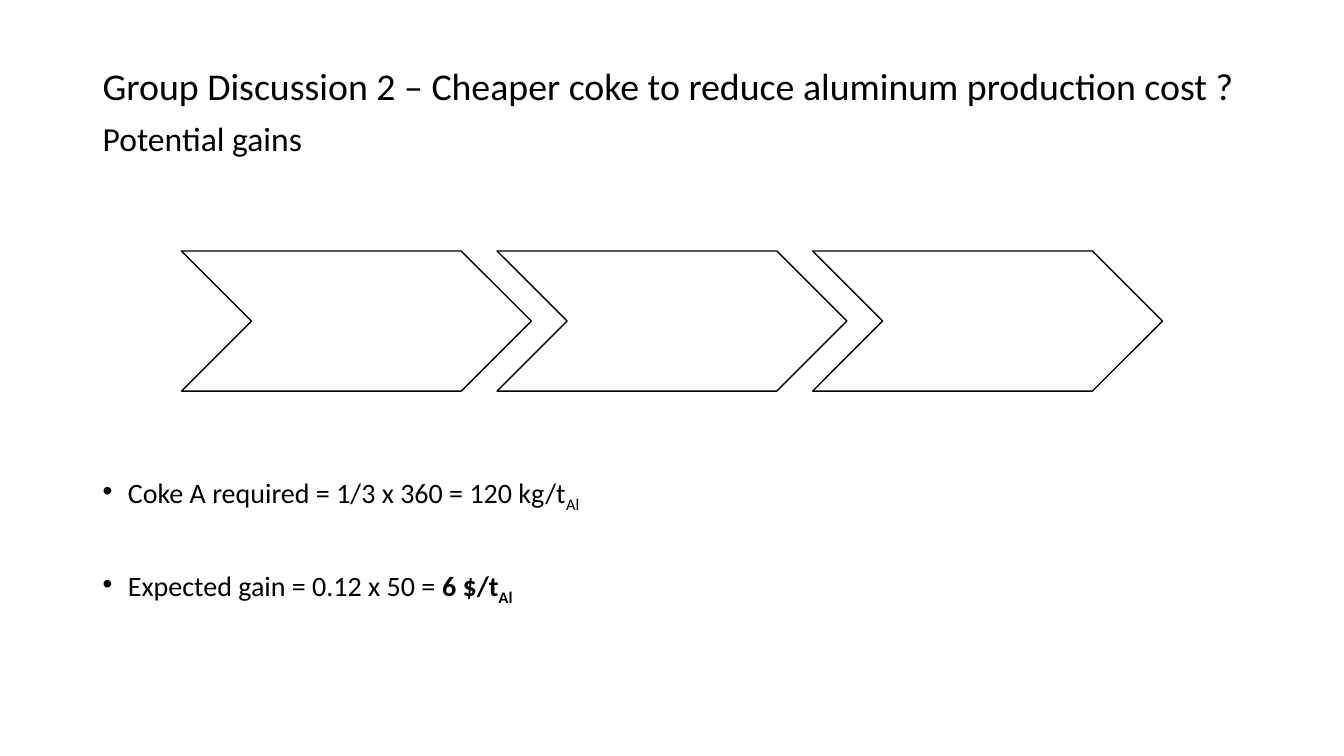
from lxml import etree
from pptx import Presentation
from pptx.dml.color import RGBColor
from pptx.enum.shapes import MSO_SHAPE
from pptx.enum.text import MSO_ANCHOR
from pptx.oxml.ns import qn
from pptx.util import Inches, Pt

CHEVRON = MSO_SHAPE.CHEVRON
MIDDLE, TOP = MSO_ANCHOR.MIDDLE, MSO_ANCHOR.TOP
BLACK = RGBColor(0, 0, 0)
WHITE = RGBColor(255, 255, 255)
FONT = "Calibri"


def add_frame(slide, box, anchor):
    frame = slide.shapes.add_textbox(*map(Inches, box)).text_frame
    frame.word_wrap = True
    frame.vertical_anchor = anchor
    return frame


def add_line(frame, index, before):
    line = frame.add_paragraph() if index else frame.paragraphs[0]
    line.line_spacing = 0.9
    line.space_before = Pt(before)
    return line


def add_words(line, words, size, bold=False, baseline=0):
    run = line.add_run()
    run.text = words
    style = {"name": FONT, "size": Pt(size), "bold": bold}
    for key, value in style.items():
        setattr(run.font, key, value)
    run.font.color.rgb = BLACK
    if baseline:
        run.font._element.set("baseline", str(baseline * 1000))


def add_heading(slide, box):
    frame = add_frame(slide, box, MIDDLE)
    lines = [
        ("Group Discussion 2 – Cheaper coke to reduce aluminum production cost ?", 27, 0),
        ("Potential gains", 24, 10),
    ]
    for index, (words, size, before) in enumerate(lines):
        add_words(add_line(frame, index, before), words, size)


def add_process(slide, box, count=3, overlap=0.34):
    left, top, width, height = box
    step_width = (width + (count - 1) * overlap) / count
    for index in range(count):
        x = left + index * (step_width - overlap)
        step = slide.shapes.add_shape(
            CHEVRON, *map(Inches, (x, top, step_width, height)))
        step.shadow.inherit = False
        step.fill.solid()
        step.fill.fore_color.rgb = WHITE
        step.line.color.rgb = BLACK
        step.line.width = Pt(1)


def add_calculations(slide, box):
    frame = add_frame(slide, box, TOP)
    calculations = [
        [("Coke A required = 1/3 x 360 = 120 kg/t", False, 0), ("Al", False, -25)],
        [("Expected gain = 0.12 x 50 = ", False, 0), ("6 $/t", True, 0), ("Al", True, -25)],
    ]
    for index, parts in enumerate(calculations):
        line = add_line(frame, index, 42 * index)
        properties = line._p.get_or_add_pPr()
        properties.set("marL", str(Inches(0.25)))
        properties.set("indent", str(Inches(-0.25)))
        etree.SubElement(properties, qn("a:buFont")).set("typeface", "Arial")
        etree.SubElement(properties, qn("a:buChar")).set("char", "•")
        for words, bold, baseline in parts:
            add_words(line, words, 20, bold, baseline)


def main():
    deck = Presentation()
    deck.slide_width, deck.slide_height = Inches(13.33), Inches(7.5)
    slide = deck.slides.add_slide(deck.slide_layouts[6])
    add_heading(slide, (0.92, 0.4, 11.5, 1.45))
    add_calculations(slide, (0.92, 4.67, 11.5, 2.09))
    add_process(slide, (1.8, 2.49, 9.73, 1.39))
    deck.save("out.pptx")


if __name__ == "__main__":
    main()
